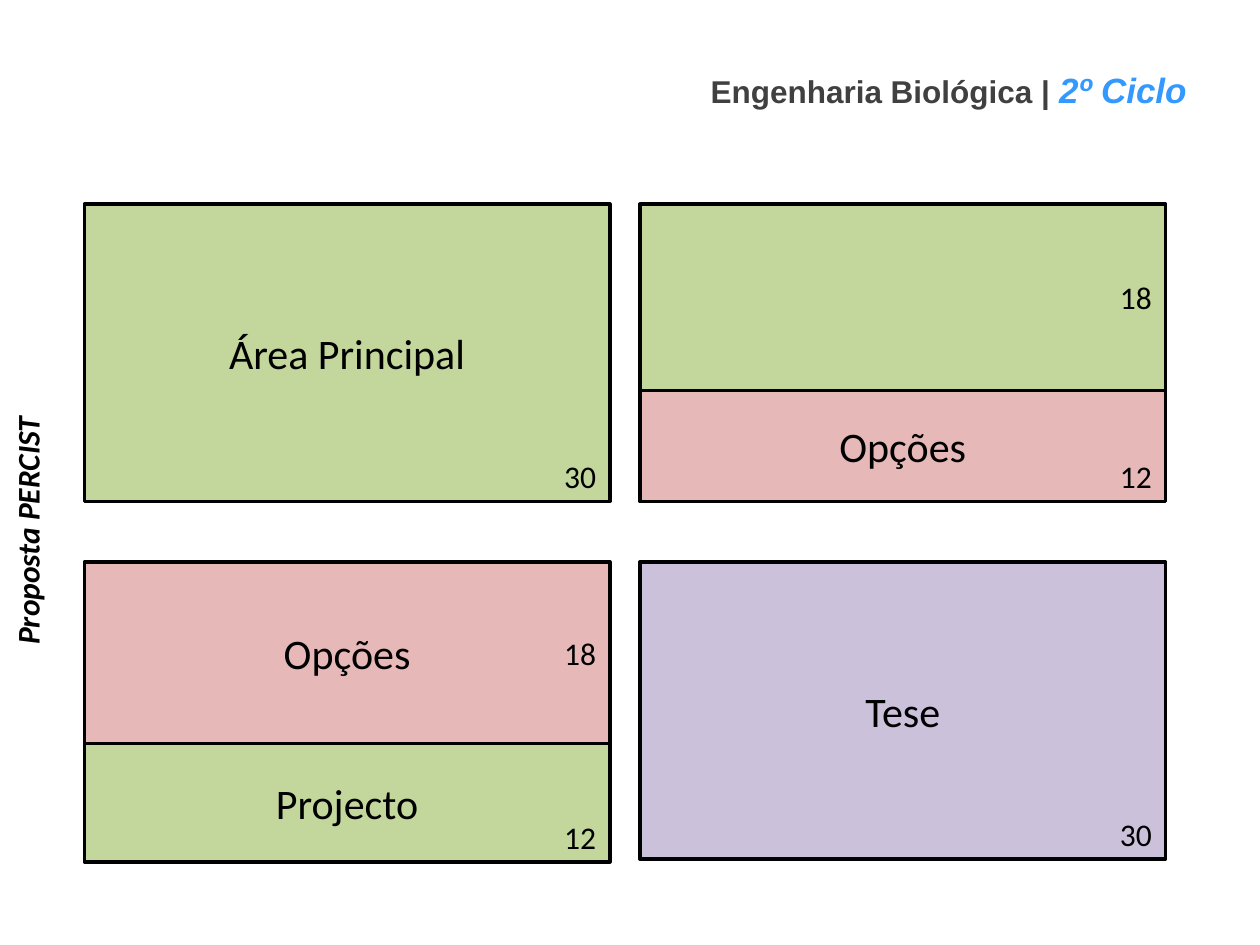
from pptx import Presentation
from pptx.dml.color import RGBColor
from pptx.enum.shapes import MSO_SHAPE
from pptx.enum.text import MSO_ANCHOR, MSO_AUTO_SIZE, PP_ALIGN
from pptx.util import Inches, Pt

RECTANGLE = MSO_SHAPE.RECTANGLE
MIDDLE = MSO_ANCHOR.MIDDLE
CENTER = PP_ALIGN.CENTER
NO_AUTOFIT = MSO_AUTO_SIZE.NONE
GROW = MSO_AUTO_SIZE.SHAPE_TO_FIT_TEXT

COLOURS = {
    "main": "C3D69B",
    "options": "E6B9B8",
    "thesis": "CCC1DA",
    "ink": "000000",
    "heading": "404040",
    "cycle": "3399FF",
}

TITLE_RUNS = [
    ("Engenharia Biológica | ", {"name": "Arial", "size": Pt(18), "bold": True, "italic": False}, "heading"),
    ("2º Ciclo", {"name": "Arial", "size": Pt(20), "bold": True, "italic": True}, "cycle"),
]
SIDE_LABEL = "Proposta PERCIST"

SEMESTERS = [
    (0, 1.62, [("Área Principal", "30", "main", 2.36, "bottom")]),
    (1, 1.62, [("", "18", "main", 1.48, "middle"), ("Opções", "12", "options", 0.88, "bottom")]),
    (0, 4.46, [("Opções", "18", "options", 1.44, "middle"), ("Projecto", "12", "main", 0.94, "bottom")]),
    (1, 4.46, [("Tese", "30", "thesis", 2.36, "bottom")]),
]
COLUMN_LEFTS = [0.67, 5.08]
BLOCK_WIDTH = 4.17
CREDIT_WIDTH, CREDIT_HEIGHT = 0.46, 0.4

LABEL_FONT = {"name": "Calibri", "size": Pt(24)}
CREDIT_FONT = {"name": "Calibri", "size": Pt(18)}
SIDE_FONT = {"name": "Calibri", "size": Pt(18), "bold": True, "italic": True}


def add_run(paragraph, text, font_format, colour="ink"):
    run = paragraph.add_run()
    run.text = text
    for name, value in font_format.items():
        setattr(run.font, name, value)
    run.font.color.rgb = RGBColor.from_string(COLOURS[colour])


def add_block(slide, left, top, height, label, colour):
    shape = slide.shapes.add_shape(
        RECTANGLE, Inches(left), Inches(top), Inches(BLOCK_WIDTH), Inches(height))
    shape.shadow.inherit = False
    shape.fill.solid()
    shape.fill.fore_color.rgb = RGBColor.from_string(COLOURS[colour])
    shape.line.color.rgb = RGBColor.from_string(COLOURS["ink"])
    shape.line.width = Pt(2)
    if label:
        shape.text_frame.vertical_anchor = MIDDLE
        paragraph = shape.text_frame.paragraphs[0]
        paragraph.alignment = CENTER
        add_run(paragraph, label, LABEL_FONT)


def add_text(slide, left, top, width, height, text, font_format):
    box = slide.shapes.add_textbox(Inches(left), Inches(top), Inches(width), Inches(height))
    box.text_frame.word_wrap = False
    box.text_frame.auto_size = GROW
    add_run(box.text_frame.paragraphs[0], text, font_format)
    return box


def add_title(slide):
    title = slide.shapes.title
    title.left, title.top = Inches(5.06), Inches(0.29)
    title.width, title.height = Inches(4.94), Inches(0.68)
    title.text_frame.auto_size = NO_AUTOFIT
    title.text_frame.vertical_anchor = MIDDLE
    paragraph = title.text_frame.paragraphs[0]
    paragraph.alignment = CENTER
    paragraph.line_spacing = 1.5
    for text, font_format, colour in TITLE_RUNS:
        add_run(paragraph, text, font_format, colour)


def add_semesters(slide):
    for column, top, blocks in SEMESTERS:
        left = COLUMN_LEFTS[column]
        for label, credits, colour, height, position in blocks:
            add_block(slide, left, top, height, label, colour)
            spare = height - CREDIT_HEIGHT
            credit_top = top + (spare / 2 if position == "middle" else spare)
            add_text(slide, left + BLOCK_WIDTH - CREDIT_WIDTH, credit_top,
                     CREDIT_WIDTH, CREDIT_HEIGHT, credits, CREDIT_FONT)
            top += height


def main():
    presentation = Presentation()
    presentation.slide_width, presentation.slide_height = Inches(10), Inches(7.5)
    slide = presentation.slides.add_slide(presentation.slide_layouts[5])
    add_title(slide)
    add_semesters(slide)
    side_label = add_text(slide, -0.8, 4, 2.03, 0.4, SIDE_LABEL, SIDE_FONT)
    side_label.rotation = 270
    presentation.save("out.pptx")


if __name__ == "__main__":
    main()
